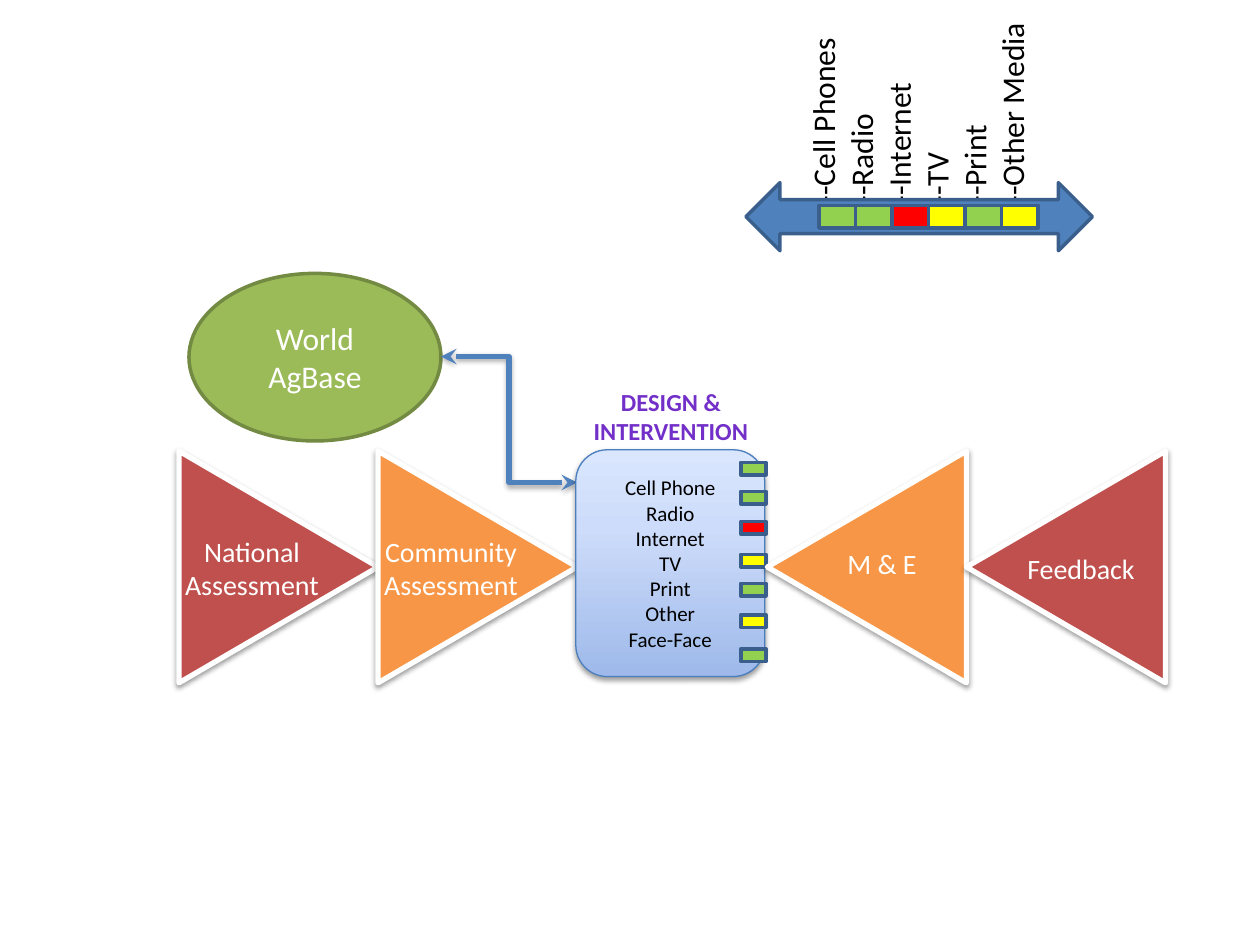
from copy import deepcopy
from dataclasses import dataclass
from lxml.etree import SubElement
from pptx import Presentation
from pptx.dml.color import RGBColor
from pptx.enum.shapes import MSO_CONNECTOR, MSO_SHAPE
from pptx.enum.text import MSO_ANCHOR, PP_ALIGN
from pptx.oxml.ns import qn
from pptx.util import Inches, Pt


@dataclass(frozen=True)
class Theme:
    font: str = "Calibri"
    large: int = 18
    label: int = 16
    head: int = 14
    small: int = 12
    blue: str = "4F81BD"
    edge: str = "3A5F8C"
    olive: str = "9BBB59"
    moss: str = "738A42"
    brick: str = "C0504D"
    orange: str = "F79646"
    purple: str = "7330C9"
    rim: str = "4B7EBC"
    white: str = "FFFFFF"
    black: str = "000000"
    green: str = "92D050"
    red: str = "FF0000"
    yellow: str = "FFFF00"
    panel: tuple = ((0, "9EB9EA"), (0.65, "CDDCFA"), (1, "D9E6FE"))


class Board:
    """Draws styled elements on one slide."""

    def __init__(self, slide, theme):
        self.slide = slide
        self.theme = theme

    def label(self, shape, lines, size, color, bold=False, align=PP_ALIGN.CENTER):
        frame = shape.text_frame
        frame.word_wrap = True
        for i, line in enumerate(lines):
            para = frame.paragraphs[0] if i == 0 else frame.add_paragraph()
            para.alignment = align
            run = para.add_run()
            run.text = line
            font = run.font
            font.name, font.size, font.bold = self.theme.font, Pt(size), bold
            font.color.rgb = RGBColor.from_string(color)
        return frame

    def text(self, box, lines, size, color, bold=False, align=PP_ALIGN.CENTER, vert=None):
        shape = self.slide.shapes.add_textbox(*map(Inches, box))
        frame = self.label(shape, lines, size, color, bold, align)
        if vert:
            frame._txBody.bodyPr.set("vert", vert)

    def shape(self, kind, box, fill, line, width=2, turn=0):
        shape = self.slide.shapes.add_shape(kind, *map(Inches, box))
        shape.shadow.inherit = False
        shape.rotation = turn
        if isinstance(fill, str):
            shape.fill.solid()
            shape.fill.fore_color.rgb = RGBColor.from_string(fill)
        else:
            self.blend(shape, fill)
        shape.line.color.rgb = RGBColor.from_string(line)
        shape.line.width = Pt(width)
        return shape

    def blend(self, shape, stops):
        shape.fill.gradient()
        shape.fill.gradient_angle = 90
        group = shape._element.spPr.find(qn("a:gradFill")).find(qn("a:gsLst"))
        group.insert(1, deepcopy(group[0]))
        for stop, (place, color) in zip(shape.fill.gradient_stops, stops):
            stop.position = place
            stop.color.rgb = RGBColor.from_string(color)

    def shade(self, shape, alpha=38):
        props = shape._element.spPr
        effect = props.find(qn("a:effectLst"))
        if effect is None:
            effect = SubElement(props, qn("a:effectLst"))
        outer = SubElement(effect, qn("a:outerShdw"), blurRad=str(Pt(3.1)),
                           dist=str(Pt(1.6)), dir="5400000", rotWithShape="0")
        color = SubElement(outer, qn("a:srgbClr"), val=self.theme.black)
        SubElement(color, qn("a:alpha"), val=str(alpha * 1000))

    def wedge(self, left, fill, turn):
        self.shade(self.shape(MSO_SHAPE.ISOSCELES_TRIANGLE, (left, 3.71, 1.84, 1.58),
                              fill, self.theme.white, 3, turn))

    def elbow(self, start, end, color):
        link = self.slide.shapes.add_connector(
            MSO_CONNECTOR.ELBOW, *map(Inches, start + end))
        link.line.color.rgb = RGBColor.from_string(color)
        link.line.width = Pt(3)
        line = link._element.spPr.find(qn("a:ln"))
        for tag in ("a:headEnd", "a:tailEnd"):
            SubElement(line, qn(tag), type="stealth")
        self.shade(link, 35)


def main():
    deck = Presentation()
    deck.slide_width, deck.slide_height = Inches(10), Inches(7.5)
    look = Theme()
    board = Board(deck.slides.add_slide(deck.slide_layouts[6]), look)

    media = ["--Cell Phones", "--Radio", "--Internet", "--TV", "--Print", "--Other Media"]
    board.text((6.33, 0.05, 2.03, 1.68), media, look.large, look.black,
               align=PP_ALIGN.LEFT, vert="vert270")
    board.shape(MSO_SHAPE.LEFT_RIGHT_ARROW, (5.92, 1.45, 2.75, 0.54), look.blue, look.edge)
    states = [look.green, look.green, look.red, look.yellow, look.green, look.yellow]
    for i, state in enumerate(states):
        board.shape(MSO_SHAPE.RECTANGLE, (6.5 + 0.29 * i, 1.63, 0.29, 0.18), state, look.edge)

    stages = [(1.29, look.brick, ["National Assessment"]),
              (2.87, look.orange, ["Community", "Assessment"])]
    for left, fill, lines in stages:
        board.wedge(left, fill, 90)
        board.text((left - 0.04, 4.19, 1.5, 0.64), lines, look.label, look.white)

    world = board.shape(MSO_SHAPE.OVAL, (1.5, 2.17, 2, 1.33), look.olive, look.moss)
    board.label(world, ["World AgBase"], look.large, look.white)
    board.elbow((3.5, 2.83), (4.58, 3.83), look.blue)

    board.text((4.5, 3.02, 1.65, 0.57), ["DESIGN & INTERVENTION"],
               look.head, look.purple, True)
    panel = board.shape(MSO_SHAPE.ROUNDED_RECTANGLE, (4.57, 3.57, 1.5, 1.8),
                        look.panel, look.rim, 0.75)
    board.shade(panel)
    means = ["Cell Phone", "Radio", "Internet", "TV", "Print", "Other", "Face-Face"]
    frame = board.label(panel, means, look.small, look.black)
    frame.vertical_anchor = MSO_ANCHOR.MIDDLE
    tops = [3.67, 3.9, 4.14, 4.4, 4.63, 4.88, 5.15]
    for top, state in zip(tops, states + [look.green]):
        board.shape(MSO_SHAPE.RECTANGLE, (5.88, top, 0.2, 0.1), state, look.edge)

    returns = [(5.96, look.orange, "M & E", 4.29), (7.54, look.brick, "Feedback", 4.33)]
    for left, fill, name, top in returns:
        board.wedge(left, fill, 270)
        board.text((left + 0.29, top, 1.5, 0.37), [name], look.label, look.white)

    deck.save("out.pptx")


if __name__ == "__main__":
    main()
